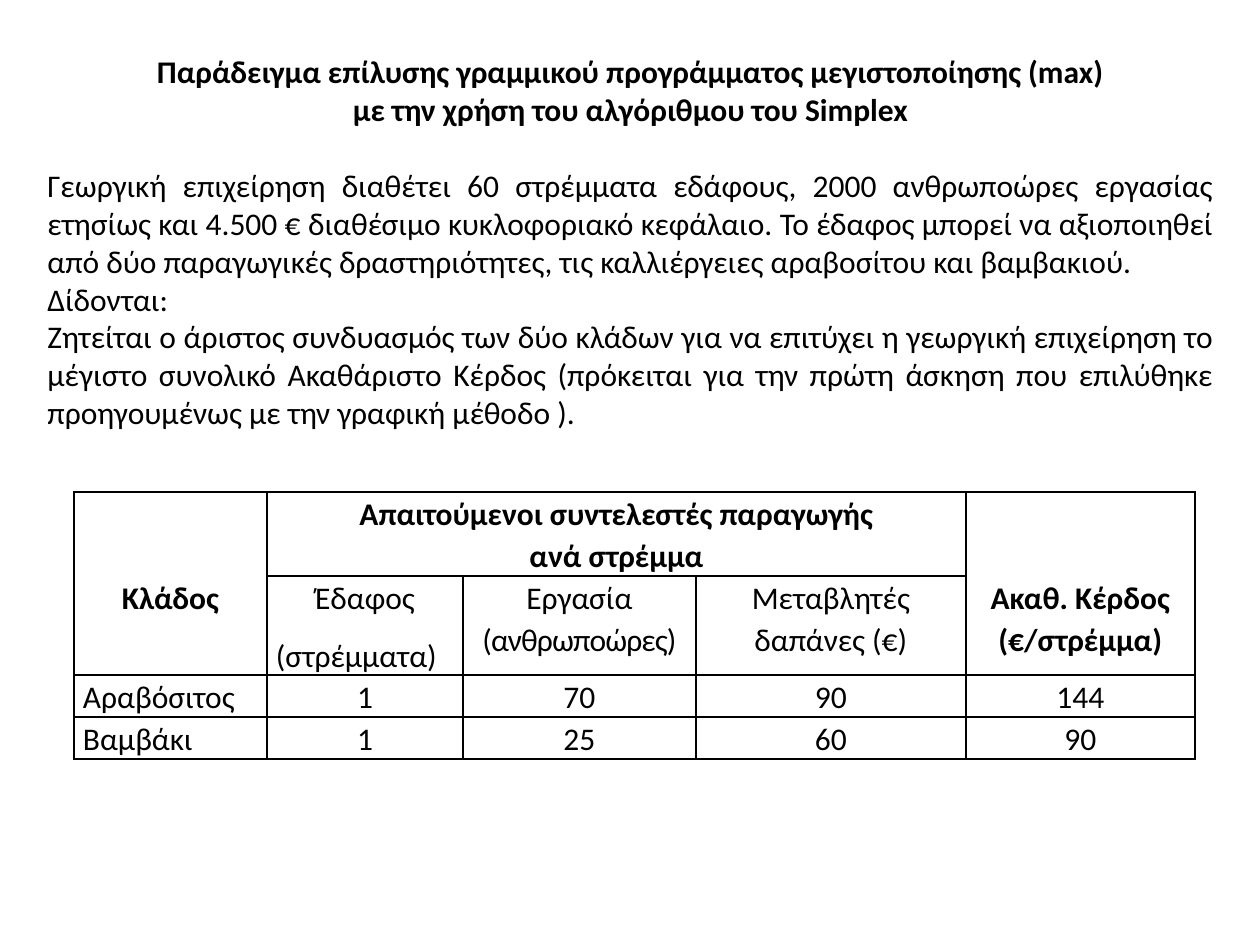
from lxml import etree
from pptx import Presentation
from pptx.dml.color import RGBColor
from pptx.enum.text import MSO_ANCHOR, MSO_AUTO_SIZE, PP_ALIGN
from pptx.oxml.ns import qn
from pptx.util import Emu, Pt

BLACK = RGBColor(0, 0, 0)
CENTER, JUSTIFY = PP_ALIGN.CENTER, PP_ALIGN.JUSTIFY
MIDDLE, TOP = MSO_ANCHOR.MIDDLE, MSO_ANCHOR.TOP
NO_FIT = MSO_AUTO_SIZE.NONE
TITLE_ONLY = 5

TITLE = [
    "Παράδειγμα επίλυσης γραμμικού προγράμματος μεγιστοποίησης (max)",
    "με την χρήση του αλγόριθμου του Simplex",
]
BODY = [
    "Γεωργική επιχείρηση διαθέτει 60 στρέμματα εδάφους, 2000 ανθρωποώρες "
    "εργασίας ετησίως και 4.500 € διαθέσιμο κυκλοφοριακό κεφάλαιο. Το έδαφος "
    "μπορεί να αξιοποιηθεί από δύο παραγωγικές δραστηριότητες, τις "
    "καλλιέργειες αραβοσίτου και βαμβακιού.",
    "Δίδονται:",
    "Ζητείται ο άριστος συνδυασμός των δύο κλάδων για να επιτύχει η γεωργική "
    "επιχείρηση το μέγιστο συνολικό Ακαθάριστο Κέρδος (πρόκειται για την πρώτη "
    "άσκηση που επιλύθηκε προηγουμένως με την γραφική μέθοδο ).",
]
COLUMNS = [193, 196, 233, 270, 229]
ROWS = [84, 98, 42, 42]
CELLS = [
    ["", "Απαιτούμενοι συντελεστές παραγωγής\nανά στρέμμα", "", "", ""],
    ["Κλάδος", "Έδαφος\n(στρέμματα)", "Εργασία\n(ανθρωποώρες)",
     "Μεταβλητές δαπάνες (€)", "Ακαθ. Κέρδος\n(€/στρέμμα)"],
    ["Αραβόσιτος", "1", "70", "90", "144"],
    ["Βαμβάκι", "1", "25", "60", "90"],
]
BOLD_CELLS = {(0, 1), (1, 0), (1, 4)}
OUTER_COLUMNS = (0, 4)


class Deck:
    """Holds the text style and the current slide, and adds elements in px."""

    SCALE = 914400 / 126
    FONT = "Calibri"
    SIZE = Pt(18)
    LEADING = Pt(24)

    def __init__(self, width, height):
        self.prs = Presentation()
        self.prs.slide_width, self.prs.slide_height = self.px(width, height)
        self.s = self.prs.slides.add_slide(self.prs.slide_layouts[TITLE_ONLY])

    def px(self, *lengths):
        return [Emu(round(n * self.SCALE)) for n in lengths]

    def fill_text(self, tf, lines, align, bold=False, leading=None):
        tf.text = "\n".join(lines)
        for p in tf.paragraphs:
            p.alignment = align
            p.line_spacing = leading
            p.font.size = self.SIZE
            for r in p.runs:
                r.font.name = self.FONT
                r.font.size = self.SIZE
                r.font.bold = bold
                r.font.color.rgb = BLACK

    def title(self, box, lines):
        sp = self.s.shapes.title
        sp.left, sp.top, sp.width, sp.height = self.px(*box)
        tf = sp.text_frame
        tf.auto_size = NO_FIT
        tf.vertical_anchor = MIDDLE
        self.fill_text(tf, lines, CENTER, bold=True)

    def text(self, box, lines):
        tf = self.s.shapes.add_textbox(*self.px(*box)).text_frame
        tf.word_wrap = True
        tf.vertical_anchor = TOP
        self.fill_text(tf, lines, JUSTIFY)

    def borders(self, cell, hidden):
        tcPr = cell._tc.get_or_add_tcPr()
        for side in "LRTB":
            ln = etree.SubElement(tcPr, qn(f"a:ln{side}"), w=str(Pt(1)))
            if side == hidden:
                etree.SubElement(ln, qn("a:noFill"))
            else:
                fill = etree.SubElement(ln, qn("a:solidFill"))
                etree.SubElement(fill, qn("a:srgbClr"), val=str(BLACK))

    def table(self, left, top, columns, rows, cells):
        box = self.px(left, top, sum(columns), sum(rows))
        table = self.s.shapes.add_table(len(rows), len(columns), *box).table
        table.first_row = table.horz_banding = False
        for column, width in zip(table.columns, self.px(*columns)):
            column.width = width
        for row, height in zip(table.rows, self.px(*rows)):
            row.height = height
        for i, values in enumerate(cells):
            for j, value in enumerate(values):
                cell = table.cell(i, j)
                cell.margin_left, cell.margin_right = self.px(9, 9)
                cell.margin_top = cell.margin_bottom = 0
                align = JUSTIFY if j == 0 and i > 1 else CENTER
                self.fill_text(cell.text_frame, value.split("\n"), align,
                               (i, j) in BOLD_CELLS, self.LEADING)
                hidden = {0: "B", 1: "T"}.get(i) if j in OUTER_COLUMNS else None
                self.borders(cell, hidden)
                cell.fill.background()
        return table


def main():
    deck = Deck(1260, 945)
    deck.title((35, 46, 1191, 88), TITLE)
    deck.text((35, 160, 1191, 276), BODY)
    table = deck.table(74, 492, COLUMNS, ROWS, CELLS)
    table.cell(0, 1).merge(table.cell(0, 3))
    land_unit = table.cell(1, 1).text_frame.paragraphs[1]
    land_unit.alignment = JUSTIFY
    land_unit.line_spacing = 1.5
    labour_unit = table.cell(1, 2).text_frame.paragraphs[1]
    labour_unit.runs[0]._r.get_or_add_rPr().set("spc", "-50")
    deck.prs.save("out.pptx")


if __name__ == "__main__":
    main()
